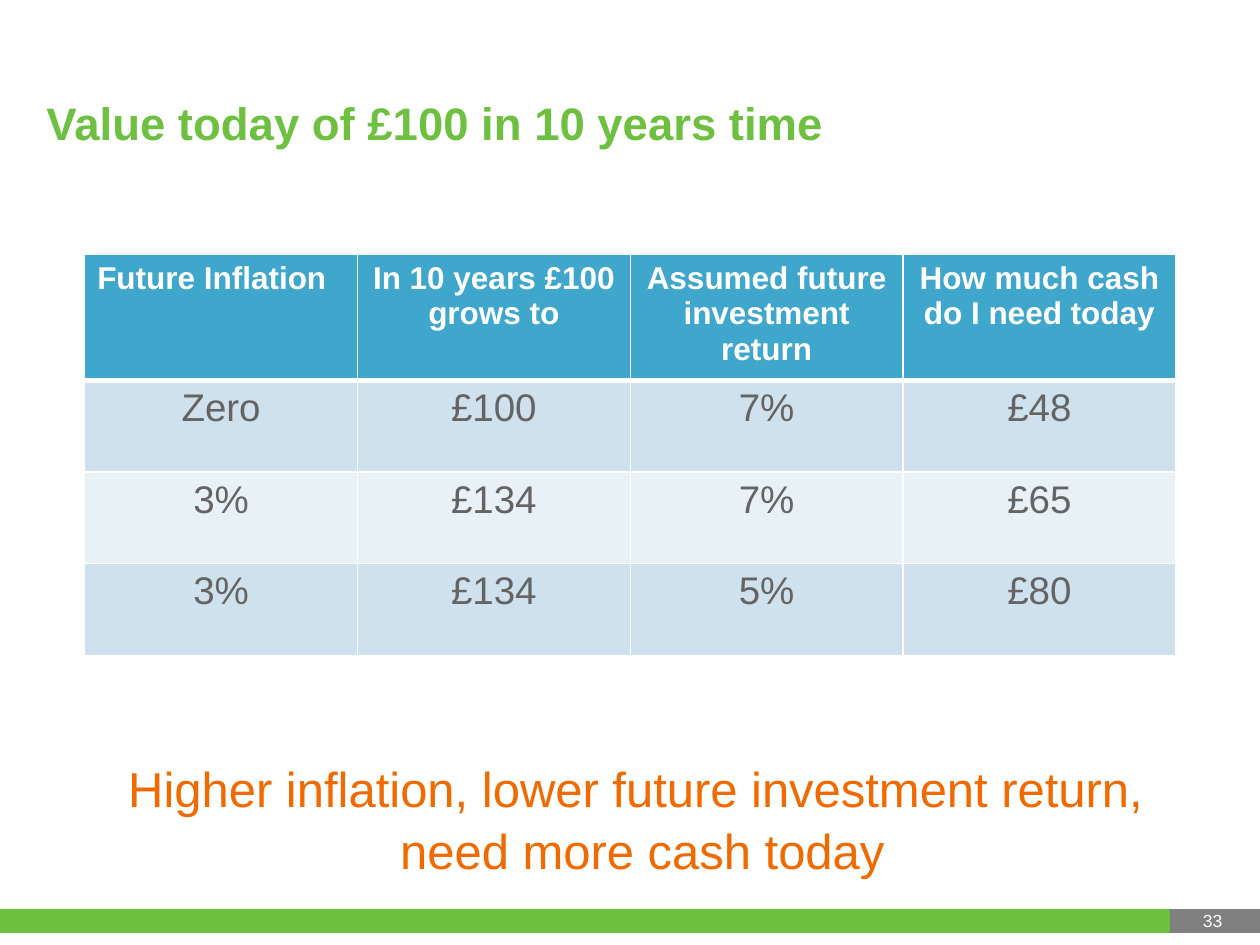
import dataclasses

import pptx
import pptx.dml.color
import pptx.enum.shapes
import pptx.enum.text
import pptx.oxml
import pptx.oxml.ns
import pptx.util

Pt = pptx.util.Pt
ALIGN = pptx.enum.text.PP_ALIGN
ANCHOR = pptx.enum.text.MSO_ANCHOR


@dataclasses.dataclass(frozen=True)
class Theme:
    """Colours, type sizes and font of the slide."""
    font: str = "Arial"
    green: str = "6EC040"
    grey: str = "808080"
    orange: str = "F06A00"
    header_blue: str = "3FA6CC"
    bands: tuple = ("CFE1EC", "E8F1F6")
    body: str = "646464"
    white: str = "FFFFFF"
    title_size: int = 26
    header_size: int = 18
    value_size: int = 22
    message_size: int = 28
    number_size: int = 10


THEME = Theme()
HEADINGS = ("Future Inflation", "In 10 years £100 grows to",
            "Assumed future investment return", "How much cash do I need today")
SCENARIOS = (("Zero", "£100", "7%", "£48"),
             ("3%", "£134", "7%", "£65"),
             ("3%", "£134", "5%", "£80"))


def rgb(code):
    """Return the colour for a hex code."""
    return pptx.dml.color.RGBColor.from_string(code)


def write(frame, lines, size, colour, bold=False, align=ALIGN.LEFT, spacing=None):
    """Fill a text frame with one paragraph per line."""
    for index, line in enumerate(lines):
        paragraph = frame.add_paragraph() if index else frame.paragraphs[0]
        paragraph.alignment = align
        if spacing:
            paragraph.line_spacing = spacing
        run = paragraph.add_run()
        run.text = line
        run.font.name = THEME.font
        run.font.size = Pt(size)
        run.font.bold = bold
        run.font.color.rgb = rgb(colour)


def add_text(slide, box, lines, size, colour, anchor=ANCHOR.TOP, wrap=True, **style):
    """Add a text box at the given left, top, width and height."""
    frame = slide.shapes.add_textbox(*map(Pt, box)).text_frame
    frame.word_wrap = wrap
    frame.vertical_anchor = anchor
    write(frame, lines, size, colour, **style)


def add_footer_bar(slide, left, width, colour):
    """Add one plain bar of the footer strip."""
    bar = slide.shapes.add_shape(pptx.enum.shapes.MSO_SHAPE.RECTANGLE,
                                 Pt(left), Pt(520.5), Pt(width), Pt(11.5))
    bar.shadow.inherit = False
    bar.fill.solid()
    bar.fill.fore_color.rgb = rgb(colour)
    bar.line.color.rgb = rgb(colour)
    bar.line.width = Pt(2)


def set_borders(cell, top, bottom):
    """Draw white borders round a cell."""
    for side, width in (("L", 1), ("R", 1), ("T", top), ("B", bottom)):
        cell._tc.get_or_add_tcPr().append(pptx.oxml.parse_xml(
            f'<a:ln{side} {pptx.oxml.ns.nsdecls("a")} w="{Pt(width)}"><a:solidFill>'
            f'<a:srgbClr val="{THEME.white}"/></a:solidFill></a:ln{side}>'))


def fill_cell(cell, text, fill, top, bottom, **style):
    """Give a cell its borders, fill and text."""
    set_borders(cell, top, bottom)
    cell.fill.solid()
    cell.fill.fore_color.rgb = rgb(fill)
    write(cell.text_frame, [text], **style)


def add_scenario_table(slide):
    """Add the table of inflation and return scenarios."""
    table = slide.shapes.add_table(len(SCENARIOS) + 1, len(HEADINGS), Pt(48.4), Pt(145.5),
                                   Pt(623.6), Pt(229)).table
    for column in table.columns:
        column.width = Pt(155.9)
    for index, row in enumerate(table.rows):
        row.height = Pt(52.3 if index else 72)
    for index, heading in enumerate(HEADINGS):
        fill_cell(table.cell(0, index), heading, THEME.header_blue, 1, 3,
                  size=THEME.header_size, colour=THEME.white, bold=True,
                  align=ALIGN.CENTER if index else ALIGN.LEFT)
    for row, scenario in enumerate(SCENARIOS, 1):
        for column, value in enumerate(scenario):
            fill_cell(table.cell(row, column), value, THEME.bands[(row - 1) % 2],
                      3 if row == 1 else 1, 1, size=THEME.value_size,
                      colour=THEME.body, align=ALIGN.CENTER)


def main():
    """Build and save the slide."""
    deck = pptx.Presentation()
    deck.slide_width, deck.slide_height = Pt(720), Pt(540)
    slide = deck.slides.add_slide(deck.slide_layouts[6])
    add_footer_bar(slide, 660, 60, THEME.grey)
    add_footer_bar(slide, 0, 667.5, THEME.green)
    add_text(slide, (659.5, 493, 46, 42.5), ["33"], THEME.number_size, THEME.white,
             anchor=ANCHOR.BOTTOM, align=ALIGN.RIGHT)
    add_text(slide, (19.5, 31.7, 672.5, 76.3), ["Value today of £100 in 10 years time"],
             THEME.title_size, THEME.green, anchor=ANCHOR.MIDDLE, bold=True)
    add_text(slide, (62, 428.5, 610, 75),
             ["Higher inflation, lower future investment return, ", "need more cash today"],
             THEME.message_size, THEME.orange, wrap=False, align=ALIGN.CENTER, spacing=1.05)
    add_scenario_table(slide)
    deck.save("out.pptx")


if __name__ == "__main__":
    main()
